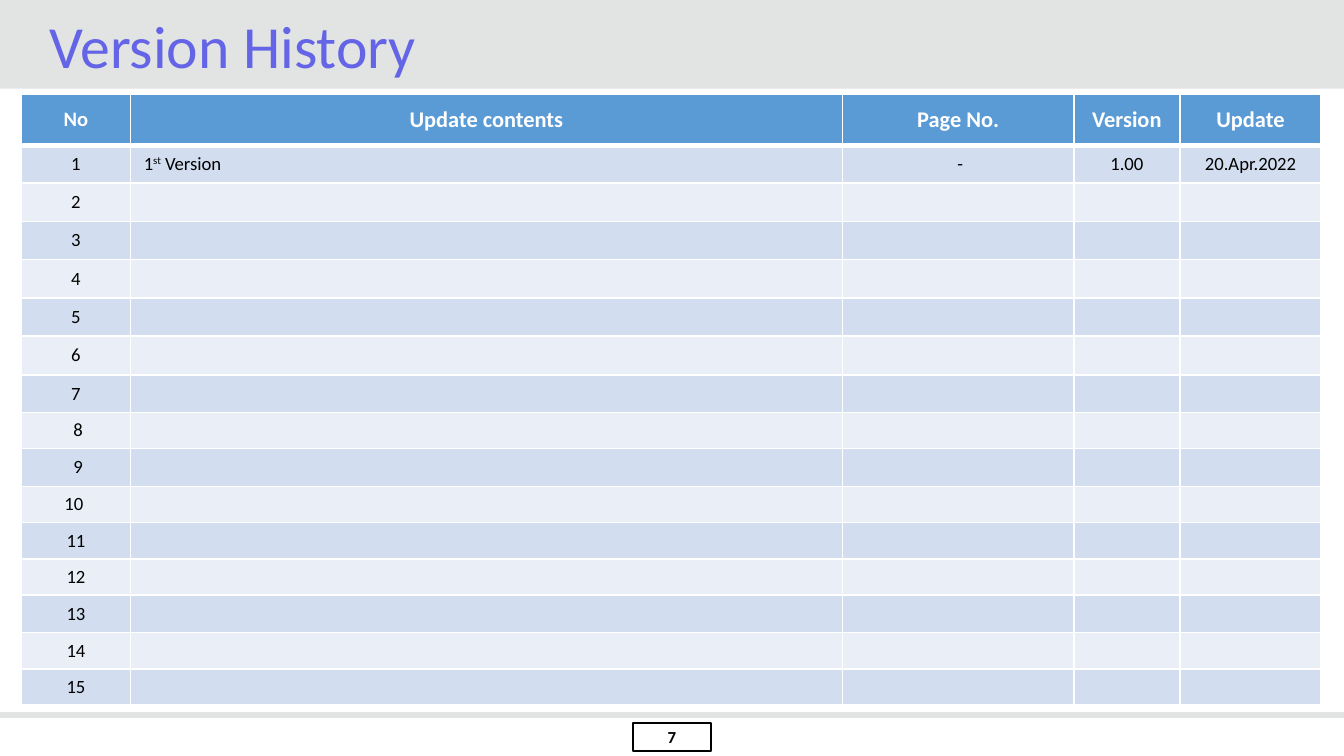
from lxml import etree
from pptx import Presentation
from pptx.dml.color import RGBColor
from pptx.enum.shapes import MSO_CONNECTOR, MSO_SHAPE
from pptx.enum.text import MSO_ANCHOR, PP_ALIGN
from pptx.oxml.ns import qn
from pptx.util import Inches, Pt

RECTANGLE = MSO_SHAPE.RECTANGLE
STRAIGHT = MSO_CONNECTOR.STRAIGHT
MIDDLE = MSO_ANCHOR.MIDDLE
CENTER = PP_ALIGN.CENTER
LEFT = PP_ALIGN.LEFT

FONT = "Calibri"
WHITE = RGBColor(0xFF, 0xFF, 0xFF)
BLACK = RGBColor(0, 0, 0)
GREY = RGBColor(0xE2, 0xE3, 0xE3)
VIOLET = RGBColor(0x64, 0x64, 0xE6)
HEADER_BLUE = RGBColor(0x5B, 0x9B, 0xD5)
ODD_BLUE = RGBColor(0xD2, 0xDE, 0xEF)
EVEN_BLUE = RGBColor(0xEA, 0xEF, 0xF7)


def add_run(paragraph, text, size, color, bold=False):
    run = paragraph.add_run()
    run.text = text
    run.font.name = FONT
    run.font.size = Pt(size)
    run.font.bold = bold
    run.font.color.rgb = color
    return run


def add_border(cell, side, width):
    line = etree.SubElement(cell._tc.get_or_add_tcPr(), qn(f"a:{side}"), w=str(Pt(width)))
    fill = etree.SubElement(line, qn("a:solidFill"))
    etree.SubElement(fill, qn("a:srgbClr"), val=str(WHITE))


prs = Presentation()
prs.slide_width = Inches(10)
prs.slide_height = Inches(10) * 9 // 16
slide = prs.slides.add_slide(prs.slide_layouts[6])
shapes = slide.shapes

title_band = shapes.add_shape(RECTANGLE, 0, 0, Inches(10), Inches(0.66))
title_band.shadow.inherit = False
title_band.fill.solid()
title_band.fill.fore_color.rgb = GREY
title_band.line.fill.background()

footer_rule = shapes.add_connector(STRAIGHT, 0, Inches(5.32), Inches(10), Inches(5.32))
footer_rule.line.color.rgb = GREY
footer_rule.line.width = Pt(3)
etree.SubElement(footer_rule._element.spPr, qn("a:effectLst"))

page_box = shapes.add_shape(RECTANGLE, Inches(4.71), Inches(5.38), Inches(0.58), Inches(0.21))
page_box.shadow.inherit = False
page_box.fill.background()
page_box.line.color.rgb = BLACK
page_box.line.width = Pt(1)
page_frame = page_box.text_frame
page_frame.vertical_anchor = MIDDLE
page_frame.margin_left = page_frame.margin_right = Inches(0.03)
page_frame.margin_top = page_frame.margin_bottom = Inches(0.03)
page_frame.paragraphs[0].alignment = CENTER
add_run(page_frame.paragraphs[0], "7", 9, BLACK, True)

headings = ["No", "Update contents", "Page No.", "Version", "Update"]
numbers = [str(n) for n in range(2, 8)] + [" 8", " 9", "10 "] + [str(n) for n in range(11, 16)]
first_version = ["1", "1", " -", "1.00", "20.Apr.2022"]
entries = [first_version] + [[number, "", "", "", ""] for number in numbers]
column_widths = [0.81, 5.3, 1.72, 0.79, 1.05]
row_heights = [0.38] + [0.28, 0.29] * 3 + [0.28, 0.27, 0.28] + [0.27] * 3 + [0.28, 0.27, 0.27]

history = shapes.add_table(
    len(row_heights), len(column_widths), Inches(0.16), Inches(0.7), Inches(9.67), Inches(4.53)
).table
for column, width in zip(history.columns, column_widths):
    column.width = Inches(width)
for row, height in zip(history.rows, row_heights):
    row.height = Inches(height)

for r, texts in enumerate([headings] + entries):
    is_header = r == 0
    row_color = HEADER_BLUE if is_header else ODD_BLUE if r % 2 else EVEN_BLUE
    for c, text in enumerate(texts):
        cell = history.cell(r, c)
        cell.vertical_anchor = MIDDLE
        add_border(cell, "lnL", 1)
        add_border(cell, "lnR", 1)
        add_border(cell, "lnT", 3 if r == 1 else 1)
        add_border(cell, "lnB", 3 if is_header else 1)
        cell.fill.solid()
        cell.fill.fore_color.rgb = row_color
        paragraph = cell.text_frame.paragraphs[0]
        paragraph.alignment = CENTER
        if is_header:
            add_run(paragraph, text, 11 if c == 0 else 12, WHITE, True)
        elif text:
            add_run(paragraph, text, 10, BLACK)
        else:
            etree.SubElement(paragraph._p, qn("a:endParaRPr"), sz="1000")

version_note = history.cell(1, 1).text_frame.paragraphs[0]
version_note.alignment = LEFT
ordinal = add_run(version_note, "st", 10, BLACK)
ordinal.font._element.set("baseline", "30000")
add_run(version_note, " Version", 10, BLACK)

title = shapes.add_textbox(Inches(0.27), Inches(0.01), Inches(9.34), Inches(0.66))
title_frame = title.text_frame
title_frame.word_wrap = True
title_frame.vertical_anchor = MIDDLE
title_frame.margin_bottom = 0
title_frame.paragraphs[0].line_spacing = 0.9
add_run(title_frame.paragraphs[0], "Version History", 32, VIOLET)

prs.save("out.pptx")
